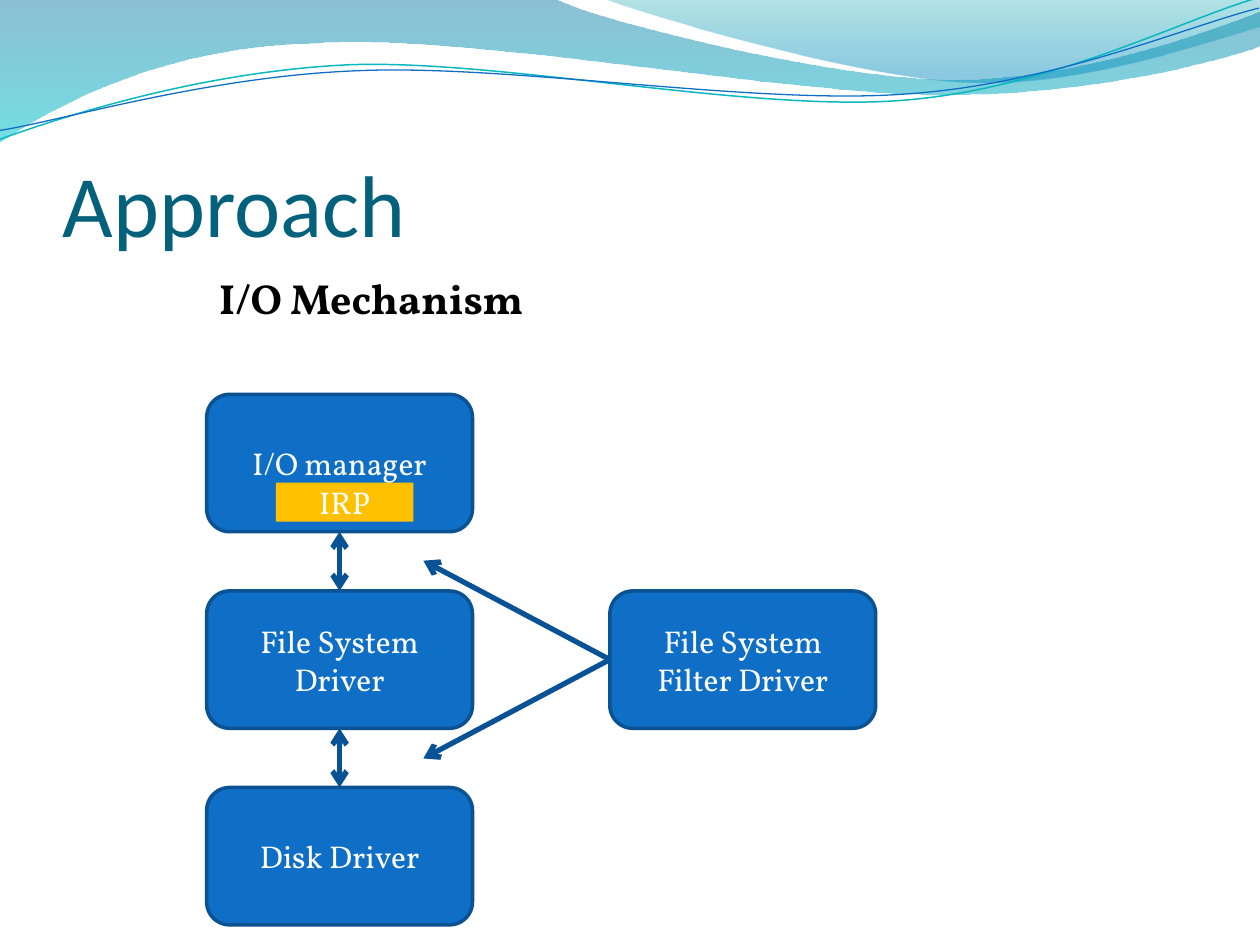
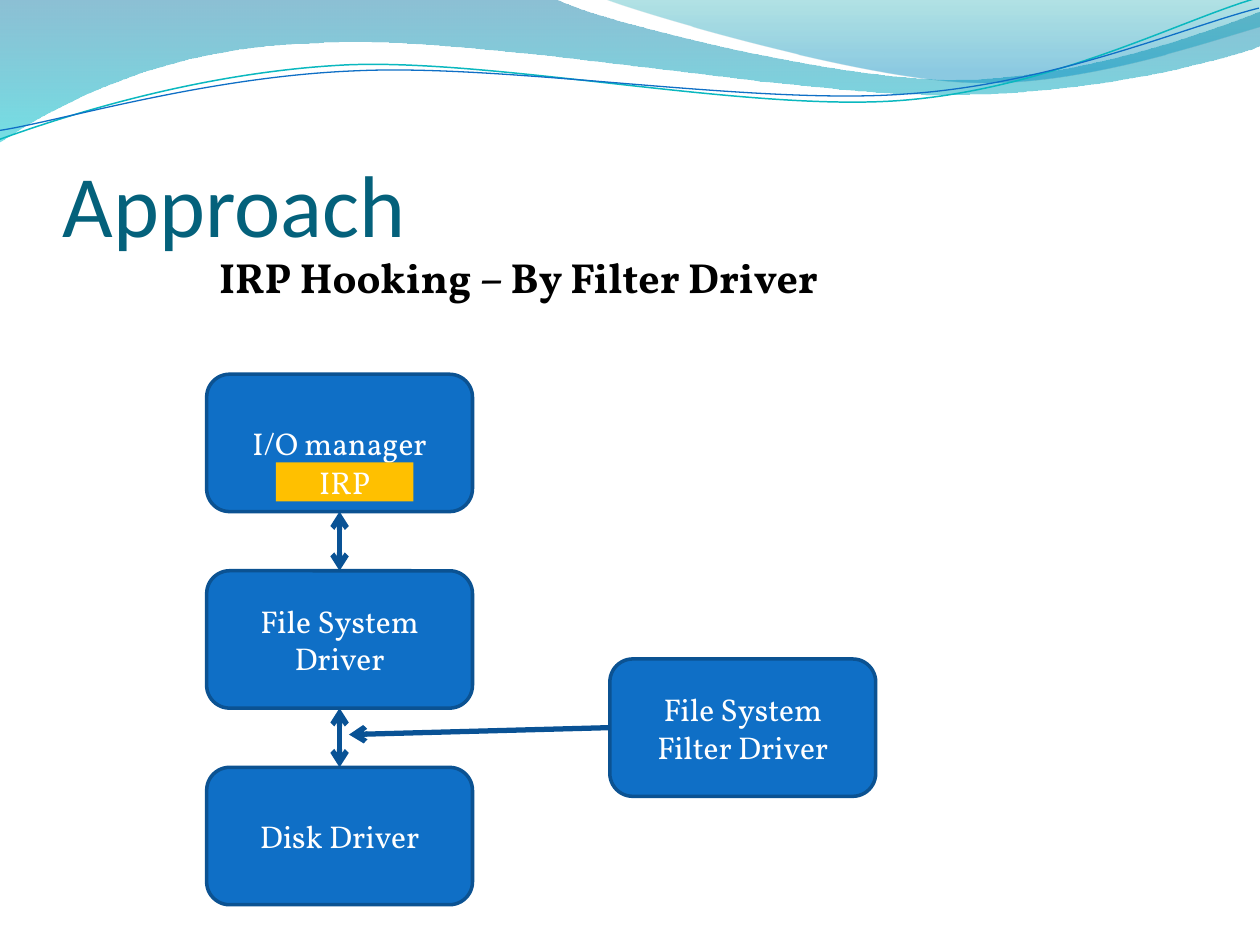
"""Build two slides that explain I/O request flow and filter driver hooking."""
from dataclasses import dataclass
from itertools import chain, pairwise

from lxml.etree import SubElement
from pptx import Presentation
from pptx.dml.color import RGBColor
from pptx.enum.shapes import MSO_CONNECTOR, MSO_SHAPE
from pptx.enum.text import MSO_ANCHOR, PP_ALIGN
from pptx.oxml.ns import qn
from pptx.presentation import Presentation as Deck
from pptx.shapes.autoshape import Shape
from pptx.shapes.connector import Connector
from pptx.slide import Slide
from pptx.text.text import TextFrame
from pptx.util import Emu, Pt

PX = 9144
SLIDE_W, SLIDE_H = 1000, 750
BOX_W, BOX_H, BOX_PITCH = 211, 109, 156
STACK_X, FILTER_X = 164, 484
LINE_ROTATION = 357.3
TOP, LEFT, BOTTOM = 0, 1, 2
Point = tuple[int, int]


@dataclass(frozen=True)
class Theme:
    title_font: str = "Calibri"
    body_font: str = "Vollkorn"
    title_size: int = 50
    heading_size: int = 24
    label_size: int = 18
    title: str = "04617B"
    heading: str = "000000"
    label: str = "FFFFFF"
    box: str = "0F6FC6"
    box_line: str = "0B5292"
    arrow: str = "095295"
    packet: str = "FFC000"
    teal_line: str = "0AB8BF"
    blue_line: str = "0F6FC6"
    box_line_width: float = 2
    arrow_width: float = 3


THEME = Theme()


@dataclass(frozen=True)
class Stop:
    position: float
    color: str
    opacity: int


@dataclass(frozen=True)
class Wave:
    """Segments hold one point for a straight side or three for a curve."""
    start: Point
    segments: tuple[tuple[Point, ...], ...]
    stops: tuple[Stop, ...] = ()
    line: str = ""
    width: float = 0


@dataclass(frozen=True)
class Diagram:
    heading: str
    top: int
    filter_top: int
    targets: tuple[Point, ...]


WAVES = (
    Wave((0, 0),
         (((440, -1),),
          ((476, 17), (664, 63), (758, 63)),
          ((853, 63), (958, 26), (1000, 9)),
          ((1001, 36),),
          ((983, 44), (870, 76), (746, 75)),
          ((622, 75), (382, 28), (257, 34)),
          ((129, 36), (46, 83), (-1, 113))),
         stops=(Stop(0, "0074A1", 45), Stop(1, "00C6CF", 55))),
    Wave((479, -1),
         (((509, 11), (682, 62), (769, 65)),
          ((856, 69), (961, 32), (1000, 21)),
          ((1000, 0),)),
         stops=(Stop(0, "00A1A9", 30), Stop(0.8, "008BBF", 45))),
    Wave((-2, 87),
         (((47, 72), (158, 41), (277, 41)),
          ((396, 42), (591, 93), (712, 90)),
          ((832, 87), (940, 36), (1000, 22))),
         line=THEME.teal_line, width=0.85),
    Wave((-2, 80),
         (((46, 75), (164, 45), (283, 46)),
          ((403, 46), (596, 88), (716, 85)),
          ((835, 83), (942, 42), (1001, 30))),
         line=THEME.blue_line, width=0.75),
)

STACK = ("I/O manager", "File System Driver", "Disk Driver")
DIAGRAMS = (
    Diagram("I/O Mechanism", 313, 469, ((336, 445), (336, 602))),
    Diagram("IRP Hooking – By Filter Driver", 297, 523, ((277, 583),)),
)


def px(*lengths: int) -> list[Emu]:
    """Convert pixel lengths to EMU."""
    return [Emu(length * PX) for length in lengths]


def rgb(color: str) -> RGBColor:
    """Make a colour from its hex code."""
    return RGBColor.from_string(color)


def write(tf: TextFrame, text: str, font: str, size: int, color: str,
          bold: bool = False, align: PP_ALIGN = PP_ALIGN.LEFT) -> None:
    """Set one paragraph of text and its style."""
    tf.word_wrap = True
    tf.text = text
    p = tf.paragraphs[0]
    p.alignment = align
    for r in p.runs:
        r.font.name = font
        r.font.size = Pt(size)
        r.font.bold = bold
        r.font.color.rgb = rgb(color)


def build_outline(s: Slide, wave: Wave) -> Shape:
    """Build a freeform whose three-point segments are Bezier curves."""
    builder = s.shapes.build_freeform(*wave.start, scale=PX)
    builder.add_line_segments(chain.from_iterable(wave.segments), close=bool(wave.stops))
    sp = builder.convert_to_shape()
    sides = iter(list(sp._element.iter(qn("a:lnTo"))))
    for segment in wave.segments:
        first, *others = [next(sides) for _ in segment]
        if others:
            first.tag = qn("a:cubicBezTo")
        for other in others:
            first.append(other[0])
            other.getparent().remove(other)
    return sp


def add_wave(s: Slide, wave: Wave) -> None:
    """Draw a gradient band or a thin curved line."""
    sp = build_outline(s, wave)
    sp.shadow.inherit = False
    if wave.line:
        sp.rotation = LINE_ROTATION
        sp.fill.background()
        sp.line.color.rgb = rgb(wave.line)
        sp.line.width = Pt(wave.width)
        return
    sp.line.fill.background()
    sp.fill.gradient()
    sp.fill.gradient_angle = 270
    for target, stop in zip(sp.fill.gradient_stops, wave.stops):
        target.position = stop.position
        target.color.rgb = rgb(stop.color)
    for element, stop in zip(sp._element.iter(qn("a:srgbClr")), wave.stops):
        SubElement(element, qn("a:alpha"), val=str(stop.opacity * 1000))


def add_title(s: Slide, text: str) -> None:
    """Add the slide title."""
    tf = s.shapes.add_textbox(*px(50, 77, 900, 125)).text_frame
    write(tf, text, THEME.title_font, THEME.title_size, THEME.title)
    tf.vertical_anchor = MSO_ANCHOR.BOTTOM
    tf.margin_left = tf.margin_right = tf.margin_bottom = 0
    tf.margin_top = px(5)[0]


def add_heading(s: Slide, text: str, top: int) -> None:
    """Add the bold heading above the diagram."""
    tf = s.shapes.add_textbox(*px(STACK_X, top, 641, 50)).text_frame
    write(tf, text, THEME.body_font, THEME.heading_size, THEME.heading, bold=True)


def add_label_shape(s: Slide, kind: MSO_SHAPE, text: str, fill: str,
                    left: int, top: int, width: int, height: int) -> Shape:
    """Add a filled shape with a centred label and no line."""
    sp = s.shapes.add_shape(kind, *px(left, top, width, height))
    sp.shadow.inherit = False
    sp.fill.solid()
    sp.fill.fore_color.rgb = rgb(fill)
    sp.line.fill.background()
    sp.text_frame.vertical_anchor = MSO_ANCHOR.MIDDLE
    write(sp.text_frame, text, THEME.body_font, THEME.label_size, THEME.label,
          align=PP_ALIGN.CENTER)
    return sp


def add_box(s: Slide, text: str, left: int, top: int) -> Shape:
    """Add a rounded driver box."""
    sp = add_label_shape(s, MSO_SHAPE.ROUNDED_RECTANGLE, text, THEME.box,
                         left, top, BOX_W, BOX_H)
    sp.line.color.rgb = rgb(THEME.box_line)
    sp.line.width = Pt(THEME.box_line_width)
    return sp


def add_arrow(s: Slide, start: Shape, site: int, end: Point,
              both: bool = False) -> Connector:
    """Add an arrow from a side of a box to a point."""
    cxn = s.shapes.add_connector(MSO_CONNECTOR.STRAIGHT, start.left, start.top, *px(*end))
    cxn.begin_connect(start, site)
    cxn.line.color.rgb = rgb(THEME.arrow)
    cxn.line.width = Pt(THEME.arrow_width)
    ln = cxn.line._get_or_add_ln()
    for tag in ("a:headEnd", "a:tailEnd") if both else ("a:tailEnd",):
        SubElement(ln, qn(tag), type="arrow")
    SubElement(cxn._element.spPr, qn("a:effectLst"))
    return cxn


def add_diagram(s: Slide, diagram: Diagram) -> None:
    """Draw the driver stack, its request packet and the filter driver."""
    tops = [diagram.top + i * BOX_PITCH for i in range(len(STACK))]
    boxes = [add_box(s, text, STACK_X, top) for text, top in zip(STACK, tops)]
    for (upper, lower), top in zip(pairwise(boxes), tops[1:]):
        cxn = add_arrow(s, upper, BOTTOM, (STACK_X + BOX_W // 2, top), both=True)
        cxn.end_connect(lower, TOP)
    add_label_shape(s, MSO_SHAPE.RECTANGLE, "IRP", THEME.packet,
                    219, diagram.top + 70, 109, 31)
    add_heading(s, diagram.heading, diagram.top - 102)
    filter_box = add_box(s, "File System Filter Driver", FILTER_X, diagram.filter_top)
    for target in diagram.targets:
        add_arrow(s, filter_box, LEFT, target)


def add_slide(prs: Deck, diagram: Diagram) -> None:
    """Add one slide with the shared waves and title."""
    s = prs.slides.add_slide(prs.slide_layouts[6])
    for wave in WAVES:
        add_wave(s, wave)
    add_title(s, "Approach")
    add_diagram(s, diagram)


def main() -> None:
    """Build and save the presentation."""
    prs = Presentation()
    prs.slide_width, prs.slide_height = px(SLIDE_W, SLIDE_H)
    for diagram in DIAGRAMS:
        add_slide(prs, diagram)
    prs.save("out.pptx")


if __name__ == "__main__":
    main()
